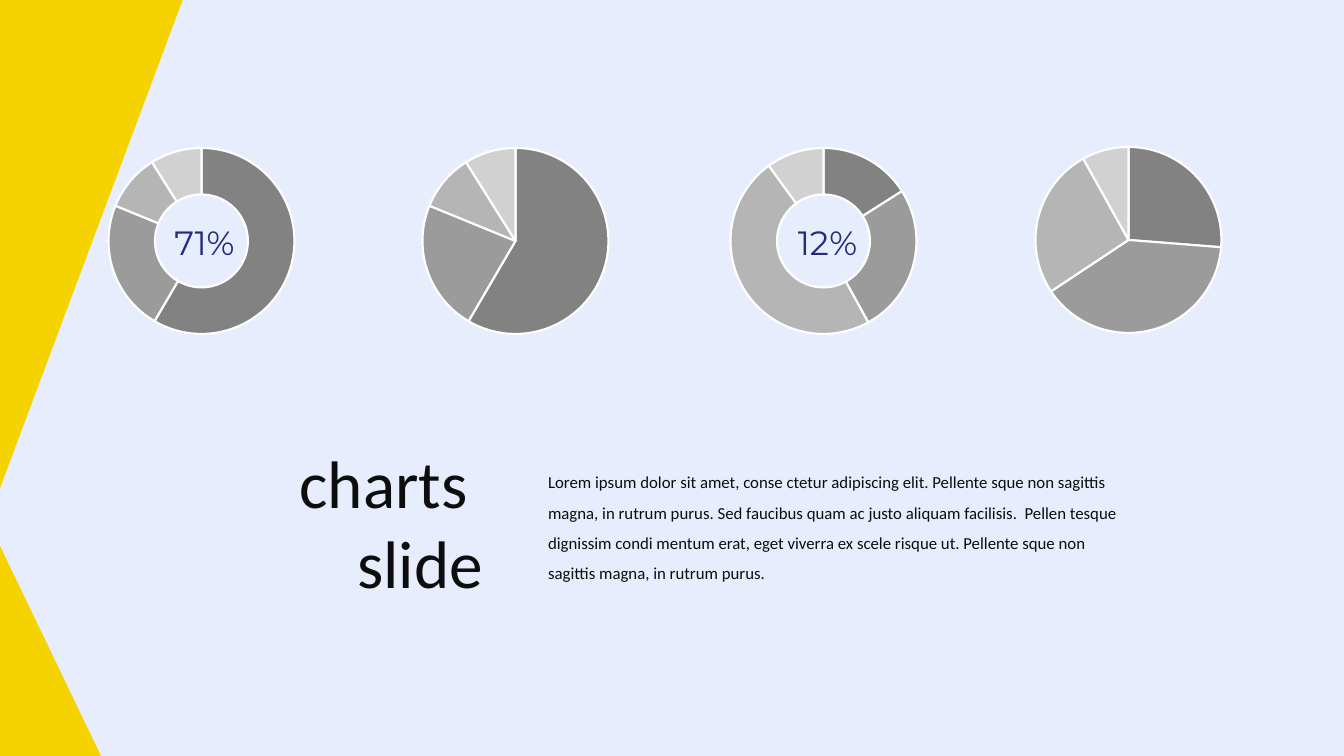
from lxml.etree import SubElement
from pptx import Presentation
from pptx.chart.data import CategoryChartData
from pptx.dml.color import RGBColor
from pptx.enum.chart import XL_CHART_TYPE as ChartType
from pptx.enum.shapes import MSO_SHAPE as Shape
from pptx.enum.text import MSO_ANCHOR as Anchor, MSO_AUTO_SIZE as AutoSize, PP_ALIGN as Align
from pptx.oxml.ns import qn
from pptx.util import Emu, Pt

BACKGROUND = RGBColor(0xE7, 0xED, 0xFD)
YELLOW = RGBColor(0xF4, 0xD3, 0x00)
INK = RGBColor(0x0D, 0x0D, 0x0D)
NAVY = RGBColor(0x26, 0x2A, 0x7C)
WHITE = RGBColor(0xFF, 0xFF, 0xFF)
BLACK = RGBColor(0x00, 0x00, 0x00)
GREYS = (
    RGBColor(0x82, 0x82, 0x82),
    RGBColor(0x9B, 0x9B, 0x9B),
    RGBColor(0xB5, 0xB5, 0xB5),
    RGBColor(0xD1, 0xD1, 0xD1),
)
BODY = (
    "Lorem ipsum dolor sit amet, conse ctetur adipiscing elit. Pellente sque non sagittis magna, "
    "in rutrum purus. Sed faucibus quam ac justo aliquam facilisis.  Pellen tesque dignissim condi "
    "mentum erat, eget viverra ex scele risque ut. Pellente sque non sagittis magna, in rutrum purus."
)


def px(length):
    """Turn whole pixels into EMU."""
    return Emu(round(length * 914400 / 100.8))


class SlideBuilder:
    """Draws styled elements on the current slide."""

    font_name = "Calibri"
    pie_size = 186

    def __init__(self, slide):
        """Keep the slide and paint its background."""
        self.slide = slide
        fill = slide.background.fill
        fill.solid()
        fill.fore_color.rgb = BACKGROUND

    def triangle(self, left, top, width, height, upside_down=False):
        """Add a yellow right triangle against the left edge."""
        shape = self.slide.shapes.add_shape(Shape.RIGHT_TRIANGLE, *map(px, (left, top, width, height)))
        shape.shadow.inherit = False
        shape.fill.solid()
        shape.fill.fore_color.rgb = YELLOW
        shape.line.fill.background()
        if upside_down:
            shape.rotation = 180
            shape.element.spPr.find(qn("a:xfrm")).set("flipH", "1")

    def text(self, shape, box, lines, size, align=Align.LEFT, spacing=1.0, color=INK, font_name=None):
        """Place a text shape and fill it with one paragraph per line."""
        shape.left, shape.top, shape.width, shape.height = map(px, box)
        frame = shape.text_frame
        frame.word_wrap = True
        frame.auto_size = AutoSize.NONE
        frame.vertical_anchor = Anchor.TOP
        for index, line in enumerate(lines):
            paragraph = frame.add_paragraph() if index else frame.paragraphs[0]
            properties = paragraph._p.get_or_add_pPr()
            properties.set("marL", "0")
            properties.set("indent", "0")
            SubElement(properties, qn("a:buNone"))
            paragraph.alignment = align
            paragraph.line_spacing = spacing
            paragraph.space_before = Pt(0)
            run = paragraph.add_run()
            run.text = line
            run.font.size = Pt(size)
            run.font.name = font_name or self.font_name
            run.font.color.rgb = color

    def label(self, box, text):
        """Add a percentage in the hole of a doughnut."""
        shape = self.slide.shapes.add_textbox(0, 0, 0, 0)
        self.text(shape, box, [text], 24, Align.CENTER, color=NAVY, font_name="Montserrat")

    def pie(self, chart_type, left, top, width, height, values):
        """Add a pie or doughnut chart in shades of grey."""
        data = CategoryChartData()
        data.categories = ["1", "2", "3", "4"]
        data.add_series("Series 1", values)
        box = map(px, (left, top, width, height))
        chart = self.slide.shapes.add_chart(chart_type, *box, data).chart
        chart.has_legend = False
        chart.has_title = False
        chart.font.size = Pt(10)
        chart.font.name = self.font_name
        chart.font.color.rgb = BLACK
        plot = chart.plots[0]
        plot.vary_by_categories = True
        for index, grey in enumerate(GREYS):
            point = plot.series[0].points[index].format
            point.fill.solid()
            point.fill.fore_color.rgb = grey
            point.line.color.rgb = WHITE
            point.line.width = Pt(1.5)
        area = chart.element.find(".//" + qn("c:plotArea"))
        hole = area.find(".//" + qn("c:holeSize"))
        if hole is not None:
            hole.set("val", "75")
        self.center_plot(area, self.pie_size / width, self.pie_size / height)

    def center_plot(self, area, width, height):
        """Give the plot a fixed share of the chart, centred."""
        layout = area.find(qn("c:layout"))
        if layout is None:
            layout = SubElement(area, qn("c:layout"))
            area.insert(0, layout)
        manual = SubElement(layout, qn("c:manualLayout"))
        settings = {
            "layoutTarget": "inner", "xMode": "edge", "yMode": "edge",
            "x": (1 - width) / 2, "y": (1 - height) / 2, "w": width, "h": height,
        }
        for name, value in settings.items():
            SubElement(manual, qn("c:" + name)).set("val", str(value))


def main():
    """Build the charts slide and save it."""
    presentation = Presentation()
    presentation.slide_width, presentation.slide_height = px(1344), px(756)
    slide = presentation.slides.add_slide(presentation.slide_layouts[1])
    builder = SlideBuilder(slide)
    builder.triangle(0, 546, 101, 210)
    builder.triangle(0, -1, 183, 489, upside_down=True)
    builder.text(slide.shapes.title, (214, 436, 279, 173), ["charts ", "slide"], 48, Align.RIGHT)
    builder.text(slide.placeholders[1], (538, 457, 592, 132), [BODY], 12, spacing=1.5)
    charts = (
        (ChartType.DOUGHNUT, 62, 134, 279, (59, 23, 10, 9)),
        (ChartType.PIE, 374, 134, 283, (59, 23, 10, 9)),
        (ChartType.DOUGHNUT, 684, 134, 279, (16, 26, 48, 10)),
        (ChartType.PIE, 987, 133, 283, (26, 39, 26, 8)),
    )
    for chart_type, left, top, width, values in charts:
        builder.pie(chart_type, left, top, width, 214, values)
    for left, text in ((775, "12%"), (152, "71%")):
        builder.label((left, 217, 105, 50), text)
    presentation.save("out.pptx")


if __name__ == "__main__":
    main()
